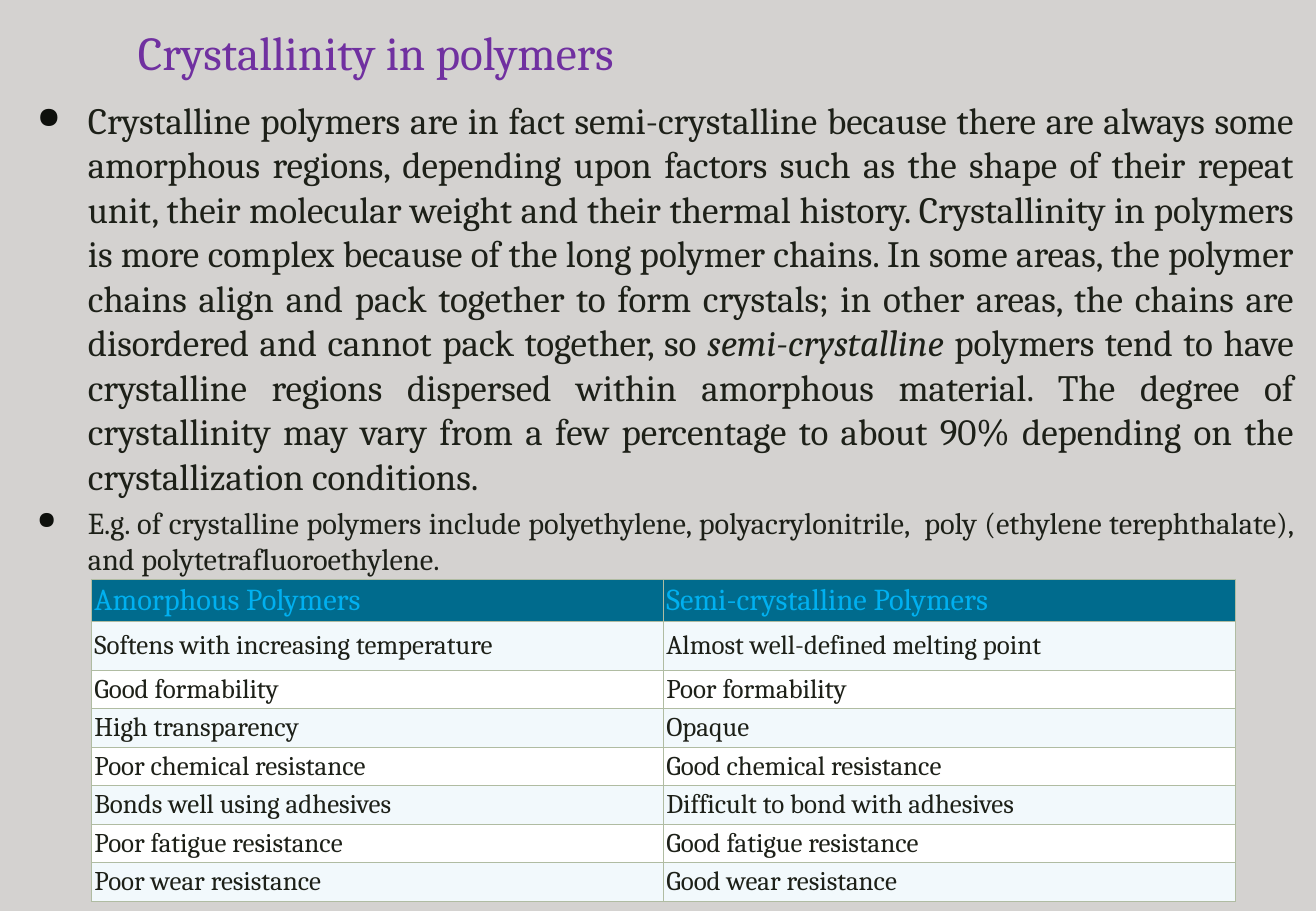
from dataclasses import dataclass

from lxml import etree
from pptx import Presentation
from pptx.dml.color import RGBColor
from pptx.enum import text
from pptx.oxml import ns
from pptx.util import Pt


@dataclass(frozen=True)
class Theme:
    font: str = "Cambria"
    back: str = "D4D2D0"
    title: str = "7030A0"
    ink: str = "1D2018"
    bullet: str = "0E100C"
    head: str = "006B8D"
    label: str = "00B0F0"
    bands: tuple = ("FFFFFF", "F2F9FC")
    rule: str = "B0BCA2"
    title_size: float = 28
    body_size: float = 22
    note_size: float = 18
    cell_size: float = 16


THEME = Theme()

BODY = [
    ("Crystalline polymers are in fact semi-crystalline because there are always "
     "some amorphous regions, depending upon factors such as the shape of their "
     "repeat unit, their molecular weight and their thermal history. Crystallinity "
     "in polymers is more complex because of the long polymer chains. In some areas, "
     "the polymer chains align and pack together to form crystals; in other areas, "
     "the chains are disordered and cannot pack together, so ", False),
    ("semi-crystalline", True),
    (" polymers tend to have crystalline regions dispersed within amorphous "
     "material. The degree of crystallinity may vary from a few percentage to about "
     "90% depending on the crystallization conditions.", False),
]
NOTE = ("E.g. of crystalline polymers include polyethylene, polyacrylonitrile,  "
        "poly (ethylene terephthalate), and polytetrafluoroethylene.")
ROWS = [
    ("Amorphous Polymers", "Semi-crystalline Polymers"),
    ("Softens with increasing temperature", "Almost well-defined melting point"),
    ("Good formability", "Poor formability"),
    ("High transparency", "Opaque"),
    ("Poor chemical resistance", "Good chemical resistance"),
    ("Bonds well using adhesives", "Difficult to bond with adhesives"),
    ("Poor fatigue resistance", "Good fatigue resistance"),
    ("Poor wear resistance", "Good wear resistance"),
]


def rgb(code):
    return RGBColor.from_string(code)


def child(parent, tag, **attrs):
    node = etree.SubElement(parent, ns.qn(tag))
    for key, value in attrs.items():
        node.set(key, str(value))
    return node


def write(para, words, size, color=THEME.ink, italic=False):
    run = para.add_run()
    run.text = words
    font = run.font
    font.name = THEME.font
    font.size = Pt(size)
    font.color.rgb = rgb(color)
    font.italic = italic


def inset(item, left, top, right, bottom):
    item.margin_left, item.margin_right = Pt(left), Pt(right)
    item.margin_top, item.margin_bottom = Pt(top), Pt(bottom)


def add_box(slide, left, top, width, height):
    box = slide.shapes.add_textbox(Pt(left), Pt(top), Pt(width), Pt(height))
    frame = box.text_frame
    frame.word_wrap = True
    return frame


def bullet(para, before=0):
    """Justify the paragraph and hang it from a round bullet."""
    para.alignment = text.PP_ALIGN.JUSTIFY
    para.space_before = Pt(before)
    props = para._p.get_or_add_pPr()
    props.set("marL", str(Pt(33)))
    props.set("indent", str(Pt(-30)))
    child(child(props, "a:buClr"), "a:srgbClr", val=THEME.bullet)
    child(props, "a:buSzPct", val=80000)
    child(props, "a:buChar", char="●")


def border(cell):
    props = cell._tc.get_or_add_tcPr()
    for index, side in enumerate(("a:lnL", "a:lnR", "a:lnT", "a:lnB")):
        line = child(props, side, w=Pt(0.6))
        child(child(line, "a:solidFill"), "a:srgbClr", val=THEME.rule)
        props.insert(index, line)


def add_title(slide):
    frame = add_box(slide, 72, 9.4, 318, 41.8)
    frame.vertical_anchor = text.MSO_ANCHOR.MIDDLE
    inset(frame, 9.8, 3.6, 3.6, 3.6)
    write(frame.paragraphs[0], "Crystallinity in polymers",
          THEME.title_size, THEME.title)


def add_body(slide):
    frame = add_box(slide, 12, 54, 762, 480)
    main_para = frame.paragraphs[0]
    bullet(main_para)
    for words, italic in BODY:
        write(main_para, words, THEME.body_size, italic=italic)
    note = frame.add_paragraph()
    bullet(note, before=3.6)
    write(note, NOTE, THEME.note_size)


def add_grid(slide):
    heights = [25.2, 28.8] + [22.8] * (len(ROWS) - 2)
    frame = slide.shapes.add_table(len(ROWS), 2, Pt(54), Pt(343.4),
                                   Pt(678), Pt(sum(heights)))
    table = frame.table
    for row, (pair, height) in enumerate(zip(ROWS, heights)):
        table.rows[row].height = Pt(height)
        fill = THEME.bands[row % 2] if row else THEME.head
        size = THEME.cell_size if row else THEME.note_size
        color = THEME.ink if row else THEME.label
        for col, words in enumerate(pair):
            cell = table.cell(row, col)
            cell.fill.solid()
            cell.fill.fore_color.rgb = rgb(fill)
            cell.vertical_anchor = text.MSO_ANCHOR.MIDDLE
            inset(cell, 2, 1.2, 2, 1.2)
            border(cell)
            write(cell.text_frame.paragraphs[0], words, size, color)


def main():
    deck = Presentation()
    deck.slide_width, deck.slide_height = Pt(780), Pt(540)
    slide = deck.slides.add_slide(deck.slide_layouts[6])
    back = slide.background.fill
    back.solid()
    back.fore_color.rgb = rgb(THEME.back)
    add_body(slide)
    add_title(slide)
    add_grid(slide)
    deck.save("out.pptx")


if __name__ == "__main__":
    main()
